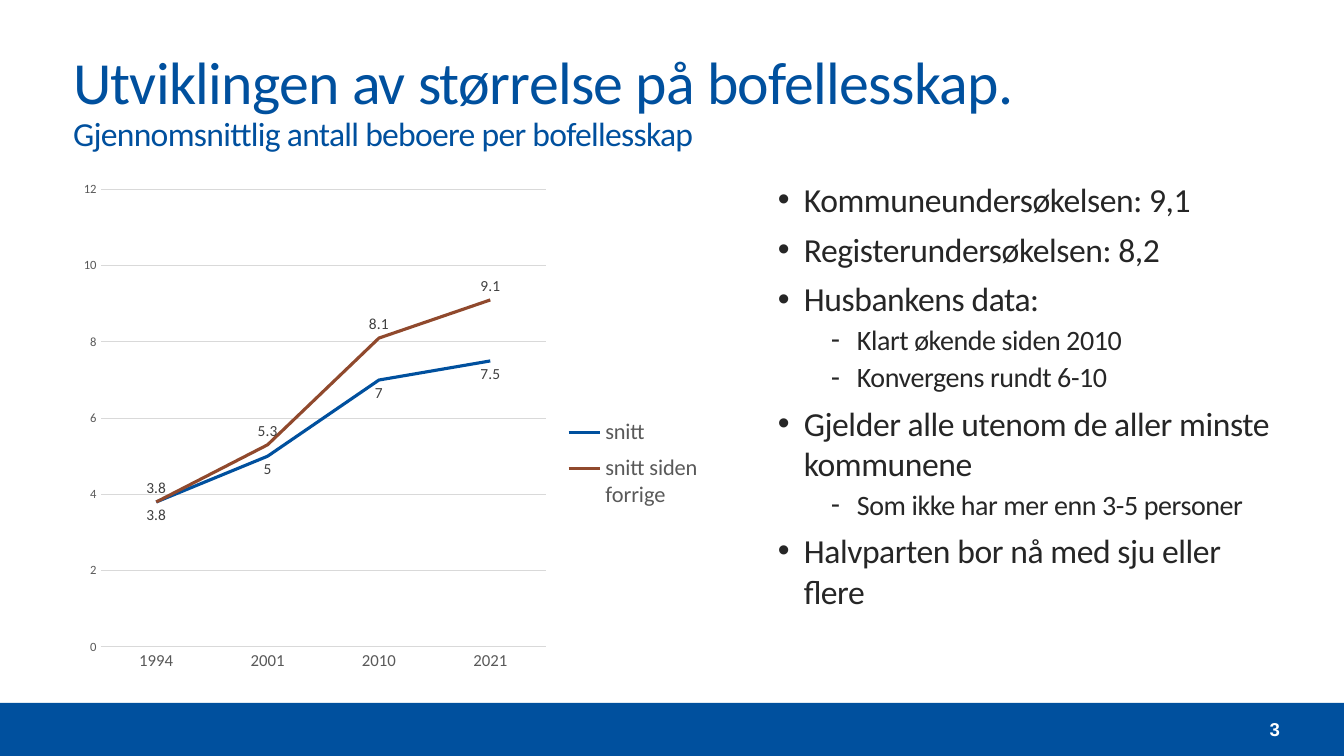
from lxml.etree import SubElement
from pptx import Presentation
from pptx.chart.data import CategoryChartData
from pptx.dml.color import RGBColor
from pptx.enum.chart import XL_CHART_TYPE as ChartType, XL_LABEL_POSITION as LabelPos
from pptx.enum.chart import XL_LEGEND_POSITION as LegendPos, XL_TICK_MARK as Tick
from pptx.enum.shapes import MSO_SHAPE as Shape
from pptx.enum.text import MSO_ANCHOR as Anchor, MSO_AUTO_SIZE as AutoSize, PP_ALIGN as Align
from pptx.oxml import parse_xml
from pptx.oxml.ns import nsdecls, qn
from pptx.util import Pt

PX = 914400 / 100.8
BLUE, BROWN, GREY, GRID = "00509E", "90492D", "595959", "D9D9D9"


def style(font, size, color, name="Calibri", bold=False):
    font.size, font.name, font.bold = Pt(size), name, bold
    font.color.rgb = RGBColor.from_string(color)


def write(paragraph, text, size, color, spacing=0, **fmt):
    run = paragraph.add_run()
    run.text = text
    style(run.font, size, color, **fmt)
    if spacing:
        run.font._element.set("spc", str(spacing))


def px(*lengths):
    return [round(length * PX) for length in lengths]


prs = Presentation()
prs.slide_width, prs.slide_height = px(1344, 756)
slide = prs.slides.add_slide(prs.slide_layouts[5])
shapes = slide.shapes

title = shapes.title
title.left, title.top, title.width, title.height = px(63, 31, 1217, 132)
heading = title.text_frame
heading.word_wrap, heading.auto_size = True, AutoSize.NONE
heading.vertical_anchor = Anchor.MIDDLE
heading.margin_top = px(17)[0]
headline = heading.paragraphs[0]
headline.alignment, headline.line_spacing = Align.LEFT, 0.9
write(headline, "Utviklingen av størrelse på bofellesskap.", 42.7, BLUE, spacing=-50)
headline.add_line_break()
write(headline, "Gjennomsnittlig antall beboere per bofellesskap", 24, BLUE, spacing=-50)

footer = shapes.add_shape(Shape.RECTANGLE, *px(0, 703, 1344, 53))
footer.shadow.inherit = False
footer.fill.solid()
footer.fill.fore_color.rgb = RGBColor.from_string(BLUE)
footer.line.fill.background()

page = shapes.add_textbox(*px(1184, 703, 96, 53)).text_frame
page.word_wrap, page.vertical_anchor = True, Anchor.MIDDLE
page.margin_left = page.margin_right = page.margin_top = page.margin_bottom = 0
page.paragraphs[0].alignment = Align.RIGHT
write(page.paragraphs[0], "3", 13.3, "FFFFFF", name="Arial", bold=True)

residents = CategoryChartData()
residents.categories = ["1994", "2001", "2010", "2021"]
residents.add_series("snitt", [3.8, 5, 7, 7.5])
residents.add_series("snitt siden forrige", [3.8, 5.3, 8.1, 9.1])
chart = shapes.add_chart(ChartType.LINE, *px(63, 174, 659, 513), residents).chart
chart.has_title = False
style(chart.font, 10, "000000")

years, counts = chart.category_axis, chart.value_axis
for axis, size in [(years, 12), (counts, 9)]:
    axis.major_tick_mark = axis.minor_tick_mark = Tick.NONE
    style(axis.tick_labels.font, size, GREY)
counts.minimum_scale, counts.maximum_scale, counts.major_unit = 0, 12, 2
counts.has_major_gridlines = True
counts.format.line.fill.background()
for line in [years.format.line, counts.major_gridlines.format.line]:
    line.width = Pt(0.75)
    line.color.rgb = RGBColor.from_string(GRID)

looks = [(BLUE, LabelPos.BELOW), (BROWN, LabelPos.ABOVE)]
for series, (color, position) in zip(chart.plots[0].series, looks):
    series.smooth = False
    series.format.line.width = Pt(2.25)
    series.format.line.color.rgb = RGBColor.from_string(color)
    labels = series.data_labels
    labels.show_value, labels.position = True, position
    style(labels.font, 11, "404040")

chart.has_legend = True
legend = chart.legend
legend.position, legend.include_in_layout = LegendPos.RIGHT, False
style(legend.font, 16, GREY)

plot_area = chart._chartSpace.chart.plotArea
layouts = [
    (plot_area, 0, '<c:layoutTarget val="inner"/>', (0.057, 0.03, 0.676, 0.892)),
    (legend._element, 1, "", (0.75, 0.46, 0.23, 0.21)),
]
for part, index, target, (x, y, w, h) in layouts:
    for default in part.findall(qn("c:layout")):
        part.remove(default)
    part.insert(index, parse_xml(
        f'<c:layout {nsdecls("c")}><c:manualLayout>{target}'
        '<c:xMode val="edge"/><c:yMode val="edge"/>'
        f'<c:x val="{x}"/><c:y val="{y}"/><c:w val="{w}"/><c:h val="{h}"/>'
        '</c:manualLayout></c:layout>'))

findings = [
    (0, "Kommuneundersøkelsen: 9,1"),
    (0, "Registerundersøkelsen: 8,2"),
    (0, "Husbankens data:"),
    (1, "Klart økende siden 2010"),
    (1, "Konvergens rundt 6-10"),
    (0, "Gjelder alle utenom de aller minste kommunene"),
    (1, "Som ikke har mer enn 3-5 personer"),
    (0, "Halvparten bor nå med sju eller flere"),
]
levels = [(26, "•", 24, 6.7), (79, "-", 20, 2.7)]
body = shapes.add_textbox(*px(768, 174, 512, 513)).text_frame
body.word_wrap = True
for number, (level, text) in enumerate(findings):
    indent, bullet, size, before = levels[level]
    point = body.add_paragraph() if number else body.paragraphs[0]
    point.level = level
    if number:
        point.space_before = Pt(before)
    properties = point._p.get_or_add_pPr()
    margin, hanging = px(indent, -26)
    properties.set("marL", str(margin))
    properties.set("indent", str(hanging))
    SubElement(properties, qn("a:buFont"), typeface="Arial")
    SubElement(properties, qn("a:buChar"), char=bullet)
    write(point, text, size, "262626", spacing=-30)

prs.save("out.pptx")
